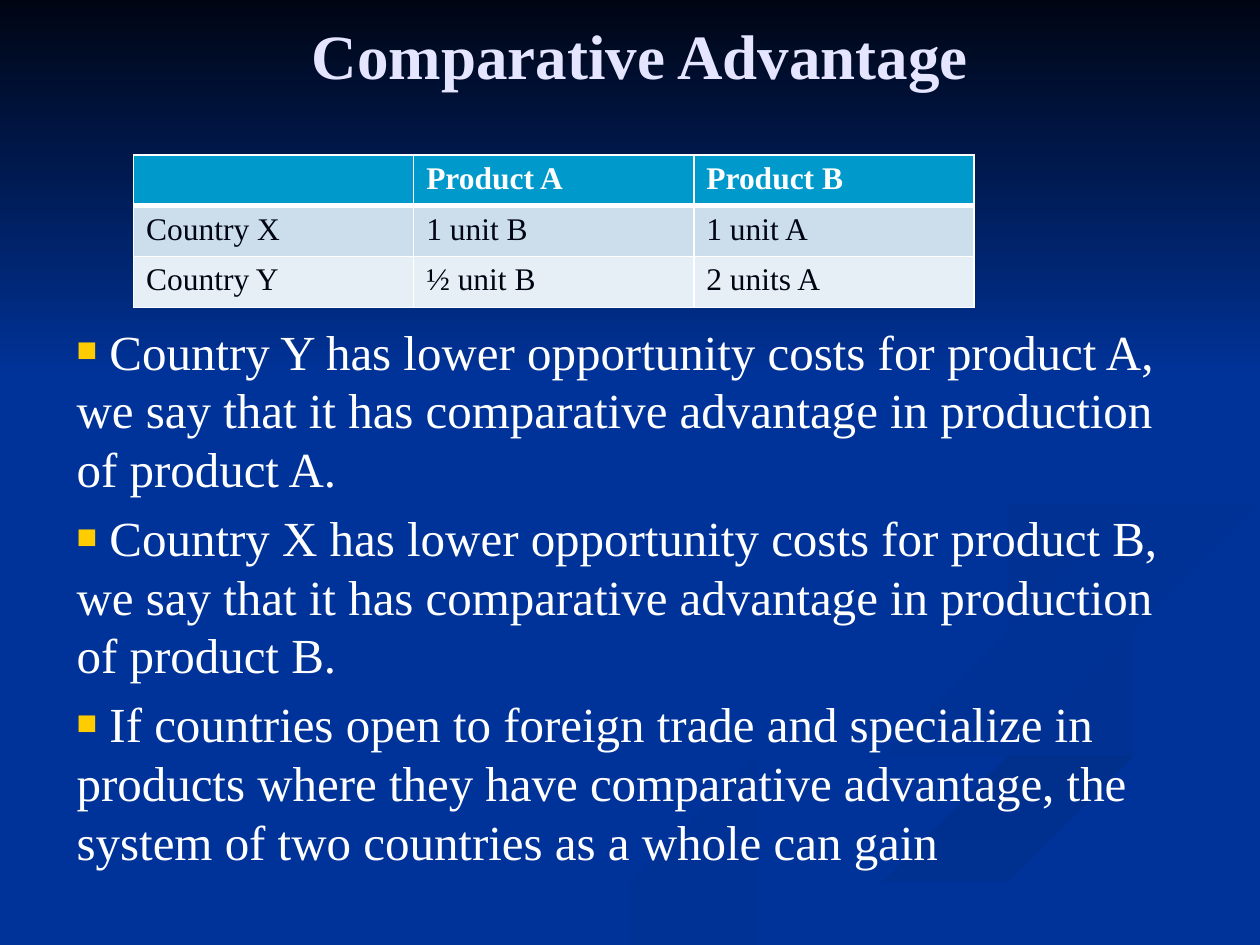
from lxml import etree
from pptx import Presentation
from pptx.dml.color import RGBColor
from pptx.enum.text import MSO_ANCHOR, PP_ALIGN
from pptx.oxml.ns import qn
from pptx.util import Inches, Pt

MIDDLE, TOP, CENTER, LEFT = MSO_ANCHOR.MIDDLE, MSO_ANCHOR.TOP, PP_ALIGN.CENTER, PP_ALIGN.LEFT

FONT = "Times New Roman"
BLUE = RGBColor(0x00, 0x33, 0x99)
SHADE = RGBColor(0x00, 0x31, 0x93)
DEEP = RGBColor(0x00, 0x2F, 0x8C)
NIGHT = RGBColor(0x00, 0x05, 0x14)
WHITE = RGBColor(0xFF, 0xFF, 0xFF)
LILAC = RGBColor(0xE5, 0xE5, 0xFF)
GOLD = RGBColor(0xFF, 0xCC, 0x00)
HEADER_FILL = RGBColor(0x00, 0x99, 0xCC)
ROW_FILLS = [RGBColor(0xCC, 0xDE, 0xEC), RGBColor(0xE7, 0xEF, 0xF6)]

WIDTH, HEIGHT = 10, 7.5
TITLE = "Comparative Advantage"
COSTS = [
    ["", "Product A", "Product B"],
    ["Country X", "1 unit B", "1 unit A"],
    ["Country Y", "½ unit B", "2 units A"],
]
POINTS = [
    " Country Y has lower opportunity costs for product A, we say that it has "
    "comparative advantage in production of product A.",
    " Country X has lower opportunity costs for product B, we say that it has "
    "comparative advantage in production of product B.",
    " If countries open to foreign trade and specialize in products where they have "
    "comparative advantage, the system of two countries as a whole can gain",
]

# Background ribbons: start colour, end colour, clockwise angle, points of a smooth outline
RIBBONS = [
    (BLUE, SHADE, 0, [
        (7.81, 5.53), (6.82, 5.19), (5.94, 4.85), (5.75, 4.59), (5.81, 4.84), (6.79, 5.19),
        (7.7, 5.51), (7.8, 5.79), (6.84, 6.13), (4.99, 6.61), (3, 7.49), (3.61, 7.49),
        (5.32, 6.74), (7.4, 6.18), (8, 5.81)]),
    (BLUE, SHADE, 45, [
        (9.43, 5.7), (9.05, 5.4), (7.74, 5.03), (7.24, 4.64), (7.46, 5), (8.68, 5.44),
        (9.18, 5.81), (8.94, 6.05), (9.32, 5.89)]),
    (DEEP, BLUE, 90, [
        (5.03, 7.49), (5.71, 7.49), (7.22, 6.82), (9.98, 6.09), (9.98, 5.81), (7.64, 6.47)]),
    (BLUE, BLUE, 0, [
        (7.25, 4.64), (7.75, 5.03), (9.05, 5.4), (9.43, 5.7), (8.92, 6.05), (6.63, 6.68),
        (4.77, 7.49), (5.19, 7.47), (7.65, 6.47), (9.99, 5.81), (9.99, 5.38), (8.48, 5.03),
        (7.81, 4.63), (8.5, 4.27), (9.99, 4.02), (9.99, 3.87), (7.88, 4.22)]),
    (SHADE, BLUE, 45, [
        (7.81, 4.6), (8.26, 4.96), (8.05, 4.72), (8.43, 4.48), (9.98, 4.2), (9.98, 4.02),
        (8.35, 4.3)]),
    (DEEP, BLUE, 45, [
        (6.83, 4.3), (8.25, 4.02), (8.94, 3.44), (8.54, 2.83), (7.62, 2.33), (8.46, 2.79),
        (8.89, 3.35), (8.42, 3.78), (6.49, 4.2), (5.77, 4.62), (6.22, 5), (5.96, 4.61)]),
]


def smooth(points, steps=6):
    """Return a closed Catmull-Rom curve through the points, kept on the slide."""
    curve = []
    for i, b in enumerate(points):
        a, c, d = points[i - 1], points[(i + 1) % len(points)], points[(i + 2) % len(points)]
        for t in (k / steps for k in range(steps)):
            x, y = (
                q + t * (r - p + t * (2 * p - 5 * q + 4 * r - s + t * (3 * (q - r) + s - p))) / 2
                for p, q, r, s in zip(a, b, c, d))
            curve.append((min(x, WIDTH), min(y, HEIGHT)))
    return curve


def paint(sp, start, end, angle):
    sp.shadow.inherit = False
    sp.line.fill.background()
    if start == end:
        sp.fill.solid()
        sp.fill.fore_color.rgb = start
        return
    sp.fill.gradient()
    sp.fill.gradient_angle = (360 - angle) % 360
    for stop, color in zip(sp.fill.gradient_stops, (start, end)):
        stop.color.rgb = color


def add_background(slide):
    slide.background.fill.solid()
    slide.background.fill.fore_color.rgb = BLUE
    for start, end, angle, points in RIBBONS:
        first, *rest = smooth(points)
        builder = slide.shapes.build_freeform(*first, scale=Inches(1))
        builder.add_line_segments(rest, close=True)
        paint(builder.convert_to_shape(), start, end, angle)
    sky = slide.shapes.build_freeform(0, 0, scale=Inches(1))
    sky.add_line_segments([(0, 3.08), (WIDTH, 3.08), (WIDTH, 0)], close=True)
    paint(sky.convert_to_shape(), NIGHT, BLUE, 90)


def add_run(p, text, size, color, bold=False):
    r = p.add_run()
    r.text = text
    r.font.name, r.font.size, r.font.bold = FONT, Pt(size), bold
    r.font.color.rgb = color


def add_text_frame(slide, left, top, width, height, anchor):
    box = slide.shapes.add_textbox(*map(Inches, (left, top, width, height)))
    tf = box.text_frame
    tf.word_wrap = True
    tf.vertical_anchor = anchor
    return tf


def add_bullet(p):
    pPr = p._p.get_or_add_pPr()
    pPr.set("marL", "0")
    pPr.set("indent", "0")
    color = etree.SubElement(pPr, qn("a:buClr"))
    etree.SubElement(color, qn("a:srgbClr"), val=str(GOLD))
    etree.SubElement(pPr, qn("a:buSzPct"), val="70000")
    etree.SubElement(pPr, qn("a:buFont"), typeface=FONT)
    etree.SubElement(pPr, qn("a:buChar"), char="■")


def set_borders(cell, top, bottom):
    """Draw white borders; top and bottom are widths in points, the sides are 1."""
    tcPr = cell._tc.get_or_add_tcPr()
    for i, (side, width) in enumerate([("L", 1), ("R", 1), ("T", top), ("B", bottom)]):
        ln = etree.Element(qn("a:ln" + side), w=str(Pt(width)))
        fill = etree.SubElement(ln, qn("a:solidFill"))
        etree.SubElement(fill, qn("a:srgbClr"), val=str(WHITE))
        tcPr.insert(i, ln)


def add_cost_table(slide):
    rows, cols = len(COSTS), len(COSTS[0])
    frame = slide.shapes.add_table(rows, cols, *map(Inches, (1.06, 1.23, 6.67, 1.21)))
    for i, row in enumerate(COSTS):
        header = i == 0
        for j, text in enumerate(row):
            cell = frame.table.cell(i, j)
            cell.fill.solid()
            cell.fill.fore_color.rgb = HEADER_FILL if header else ROW_FILLS[i - 1]
            set_borders(cell, top=3 if i == 1 else 1, bottom=3 if header else 1)
            if text:
                add_run(cell.text_frame.paragraphs[0], text, 18,
                        WHITE if header else NIGHT, header)


def main():
    prs = Presentation()
    prs.slide_width, prs.slide_height = Inches(WIDTH), Inches(HEIGHT)
    slide = prs.slides.add_slide(prs.slide_layouts[6])
    add_background(slide)

    p = add_text_frame(slide, 0.51, 0, 9.14, 0.87, MIDDLE).paragraphs[0]
    p.alignment = CENTER
    add_run(p, TITLE, 36, LILAC, bold=True)

    tf = add_text_frame(slide, 0.51, 2.5, 8.82, 4.8, TOP)
    for i, text in enumerate(POINTS):
        p = tf.paragraphs[0] if i == 0 else tf.add_paragraph()
        p.alignment = LEFT
        p.line_spacing = Pt(33.6)
        p.space_before = Pt(5.6)
        add_bullet(p)
        add_run(p, text, 28, WHITE)

    add_cost_table(slide)
    prs.save("out.pptx")


if __name__ == "__main__":
    main()
